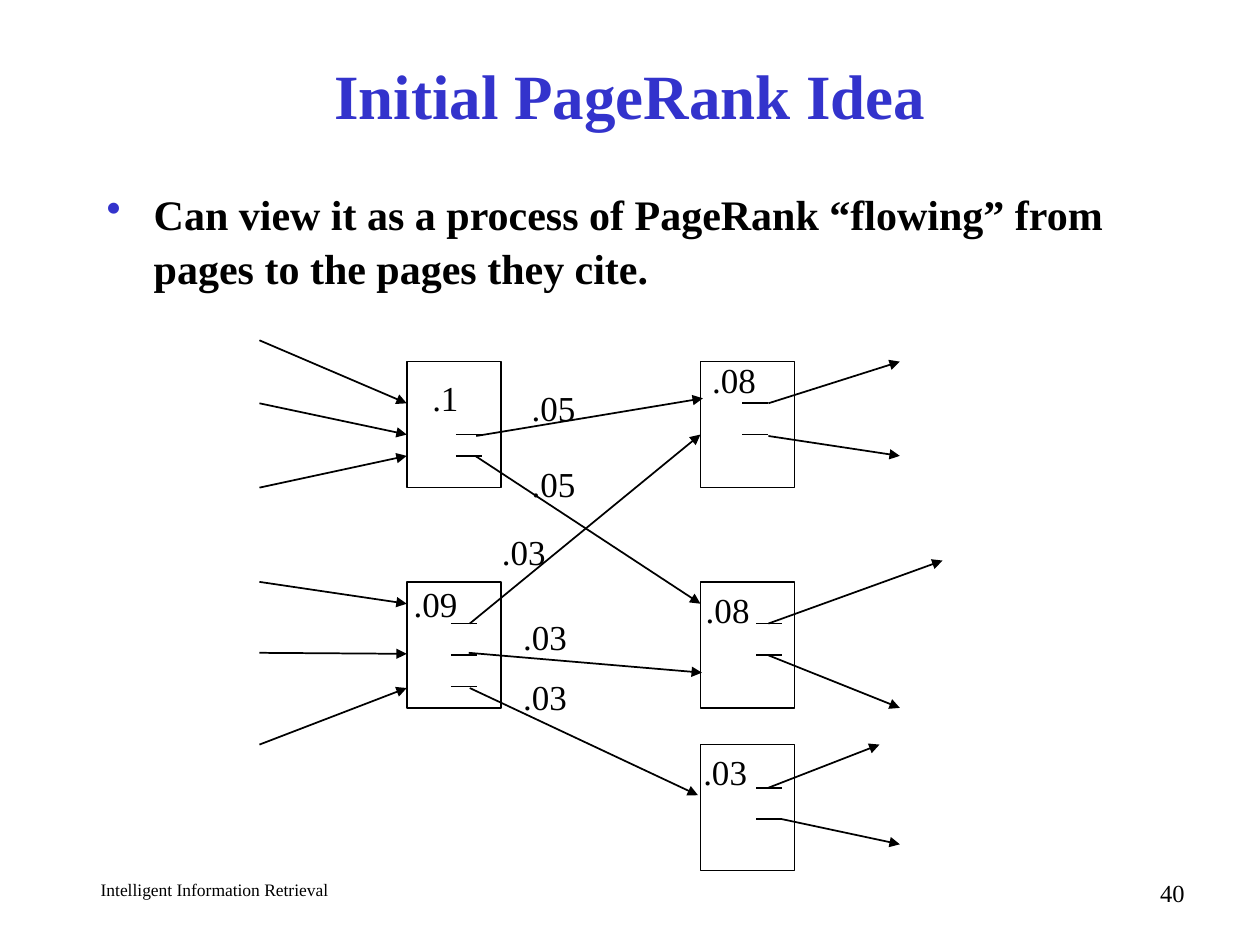
"""Build a slide showing PageRank flowing between linked pages."""
from lxml.etree import SubElement
from pptx import Presentation
from pptx.dml.color import RGBColor
from pptx.enum.shapes import MSO_CONNECTOR, MSO_SHAPE
from pptx.enum.text import MSO_ANCHOR, PP_ALIGN
from pptx.oxml.ns import qn
from pptx.util import Cm, Pt

COLORS = {"ink": "000000", "accent": "3333CC"}
FONT = "Times New Roman"
TITLE = "Initial PageRank Idea"
BODY = "Can view it as a process of PageRank “flowing” from pages to the pages they cite."
FOOTER = "Intelligent Information Retrieval"
NUMBER = "40"

LEFT_X, RIGHT_X, IN_X = 8.2, 14.12, 5.23
PAGE_W, PAGE_H, STUB_W = 1.9, 2.54, 0.53
PAGES = [(LEFT_X, 7.29), (LEFT_X, 11.73), (RIGHT_X, 7.29), (RIGHT_X, 11.73), (RIGHT_X, 15.01)]
STUBS = [
    (9.19, (8.76, 9.19)),
    (9.09, (12.57, 13.21, 13.84)),
    (14.96, (8.13, 8.76)),
    (15.24, (12.57, 13.21, 15.88, 16.51)),
]
INCOMING = [(6.86, 8.13), (8.13, 8.76), (9.83, 9.19), (11.73, 12.17), (13.16, 13.18), (15.01, 13.87)]
FLOWS = [
    (9.6, 8.79, 14.17, 8.03),
    (9.58, 9.19, RIGHT_X, 12.17),
    (9.47, 12.57, RIGHT_X, 8.76),
    (9.45, 13.16, 14.15, 13.56),
    (9.47, 13.87, 14.07, 16.03),
]
OUTGOING = [
    (15.49, 8.13, 18.14, 7.29),
    (15.49, 8.79, 18.14, 9.19),
    (15.49, 12.57, 19, 11.3),
    (15.49, 13.21, 18.14, 14.27),
    (15.49, 15.88, 17.73, 15.01),
    (15.75, 16.51, 18.14, 17.02),
]
RANKS = [
    (".1", 8.46, 7.47, 1.04),
    (".09", 8.08, 11.61, 1.4),
    (".05", 10.46, 7.67, 1.4),
    (".05", 10.46, 9.19, 1.4),
    (".03", 9.86, 10.57, 1.4),
    (".03", 10.29, 12.29, 1.4),
    (".03", 10.29, 13.49, 1.4),
    (".08", 14.1, 7.11, 1.4),
    (".08", 13.97, 11.73, 1.4),
    (".03", 13.92, 15.01, 1.4),
]


def rgb(name):
    return RGBColor.from_string(COLORS[name])


def add_text(s, text, box, size, color="ink", bold=False, align=PP_ALIGN.LEFT,
             anchor=MSO_ANCHOR.TOP, wrap=True):
    tf = s.shapes.add_textbox(*map(Cm, box)).text_frame
    tf.word_wrap = wrap
    tf.vertical_anchor = anchor
    tf.text = text
    p = tf.paragraphs[0]
    p.alignment = align
    font = p.runs[0].font
    font.name, font.size, font.bold = FONT, Pt(size), bold
    font.color.rgb = rgb(color)
    return p


def add_bullet(p):
    pPr = p._p.get_or_add_pPr()
    pPr.set("marL", str(Cm(0.95)))
    pPr.set("indent", str(Cm(-0.95)))
    SubElement(SubElement(pPr, qn("a:buClr")), qn("a:srgbClr"), val=COLORS["accent"])
    SubElement(pPr, qn("a:buChar"), char="•")


def add_line(s, x1, y1, x2, y2, arrow=False):
    line = s.shapes.add_connector(MSO_CONNECTOR.STRAIGHT, Cm(x1), Cm(y1), Cm(x2), Cm(y2))
    line.line.color.rgb = rgb("ink")
    line.line.width = Pt(1)
    if arrow:
        SubElement(line.line._get_or_add_ln(), qn("a:tailEnd"), type="triangle")
    SubElement(line._element.spPr, qn("a:effectLst"))


def add_page(s, x, y):
    sp = s.shapes.add_shape(MSO_SHAPE.RECTANGLE, Cm(x), Cm(y), Cm(PAGE_W), Cm(PAGE_H))
    sp.shadow.inherit = False
    sp.fill.background()
    sp.line.color.rgb = rgb("ink")
    sp.line.width = Pt(1)


def main():
    prs = Presentation()
    prs.slide_width, prs.slide_height = Cm(25.4), Cm(19.05)
    s = prs.slides.add_slide(prs.slide_layouts[6])

    add_text(s, FOOTER, (1.78, 17.6, 9.53, 0.64), 10)
    add_text(s, NUMBER, (18.85, 17.58, 5.28, 0.64), 14, align=PP_ALIGN.RIGHT)
    add_text(s, TITLE, (1.9, 0.84, 21.6, 2.11), 36, "accent", True, PP_ALIGN.CENTER, MSO_ANCHOR.MIDDLE)
    p = add_text(s, BODY, (1.9, 3.61, 21.6, 13.54), 24, bold=True)
    p.line_spacing = 1.07
    p.space_before = Pt(4.8)
    add_bullet(p)

    for x, y in PAGES:
        add_page(s, x, y)
    for x, ys in STUBS:
        for y in ys:
            add_line(s, x, y, x + STUB_W, y)
    arrows = FLOWS + OUTGOING + [(IN_X, y1, LEFT_X, y2) for y1, y2 in INCOMING]
    for ends in arrows:
        add_line(s, *ends, arrow=True)
    for text, x, y, w in RANKS:
        add_text(s, text, (x, y, w, 1.09), 20, align=PP_ALIGN.CENTER, wrap=False)

    prs.save("out.pptx")


if __name__ == "__main__":
    main()
